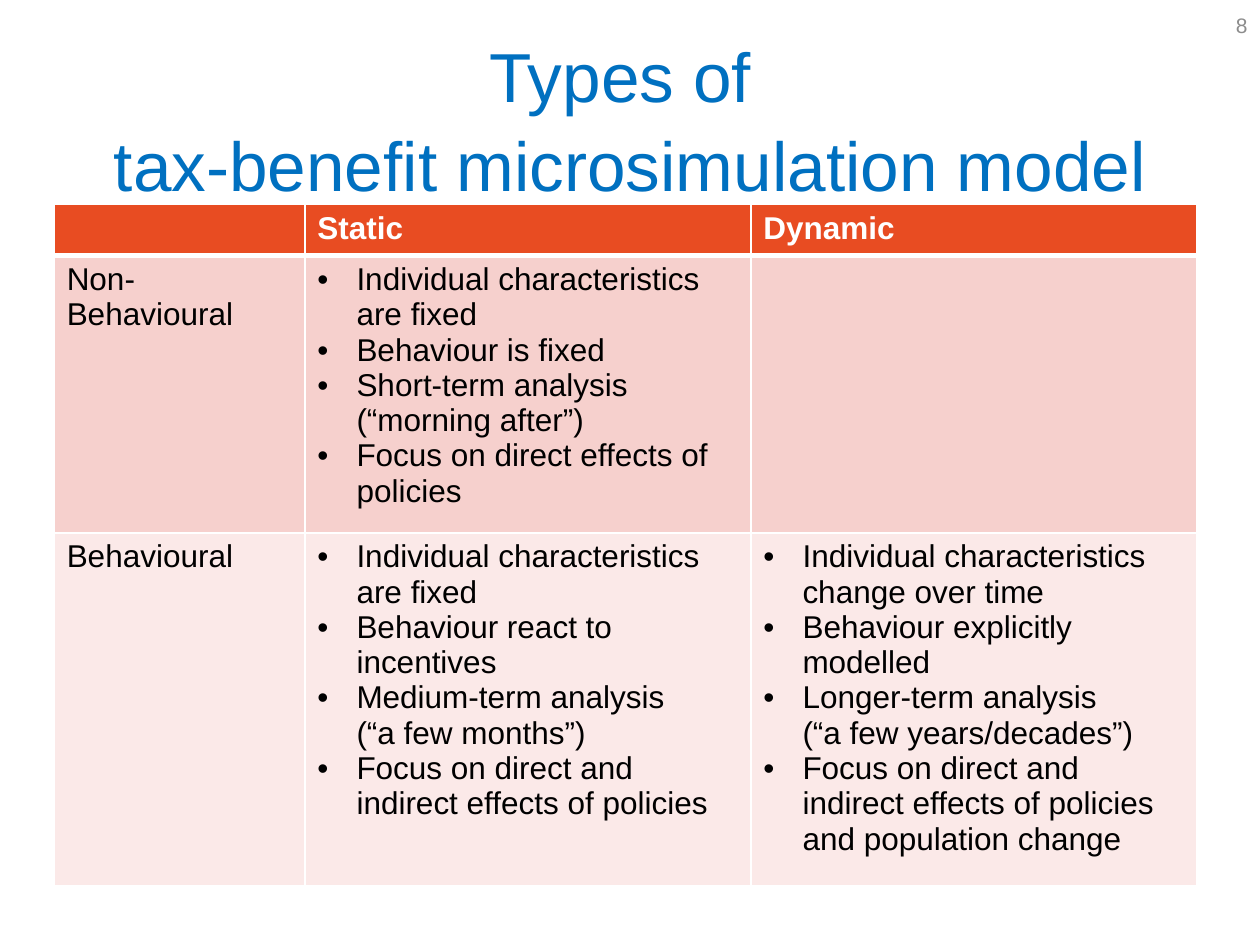
from pptx import Presentation
from pptx.dml.color import RGBColor
from pptx.enum.text import MSO_ANCHOR, MSO_AUTO_SIZE, PP_ALIGN
from pptx.oxml import parse_xml
from pptx.oxml.ns import nsdecls
from pptx.util import Inches, Pt

BLUE = RGBColor(0x00, 0x70, 0xC0)
GREY = RGBColor(0x8C, 0x8C, 0x8C)
ORANGE = RGBColor(0xE8, 0x4C, 0x22)
ROSE = RGBColor(0xF6, 0xD0, 0xCD)
PALE = RGBColor(0xFB, 0xE9, 0xE8)
WHITE = RGBColor(0xFF, 0xFF, 0xFF)
BLACK = RGBColor(0x00, 0x00, 0x00)

WIDTHS = (1.99, 3.54, 3.54)
HEIGHTS = (0.41, 2.06, 2.64)
FILLS = (ORANGE, ROSE, PALE)
MODELS = (
    ((), ("Static",), ("Dynamic",)),
    (
        ("Non-Behavioural",),
        (
            "Individual characteristics are fixed",
            "Behaviour is fixed",
            "Short-term analysis (“morning after”)",
            "Focus on direct effects of policies",
        ),
        (),
    ),
    (
        ("Behavioural",),
        (
            "Individual characteristics are fixed",
            "Behaviour react to incentives",
            "Medium-term analysis \v(“a few months”)",
            "Focus on direct and indirect effects of policies",
        ),
        (
            "Individual characteristics change over time",
            "Behaviour explicitly modelled",
            "Longer-term analysis \v(“a few years/decades”)",
            "Focus on direct and indirect effects of policies and population change",
        ),
    ),
)


def set_font(para, size, color, bold=False):
    font = para.font
    font.name = "Arial"
    font.size = Pt(size)
    font.bold = bold
    font.color.rgb = color


def add_title(slide, left, top, width, height):
    title = slide.shapes.title
    title.left, title.top = Inches(left), Inches(top)
    title.width, title.height = Inches(width), Inches(height)
    frame = title.text_frame
    frame.auto_size = MSO_AUTO_SIZE.NONE
    frame.vertical_anchor = MSO_ANCHOR.MIDDLE
    para = frame.paragraphs[0]
    para.text = "Types of \vtax-benefit microsimulation model"
    para.alignment = PP_ALIGN.CENTER
    para.line_spacing = 1.07
    set_font(para, 39.6, BLUE)


def add_number(slide, left, top, width, height):
    box = slide.shapes.add_textbox(
        Inches(left), Inches(top), Inches(width), Inches(height)
    )
    frame = box.text_frame
    frame.word_wrap = True
    frame.vertical_anchor = MSO_ANCHOR.MIDDLE
    para = frame.paragraphs[0]
    para.text = "8"
    para.alignment = PP_ALIGN.RIGHT
    set_font(para, 12, GREY)


def add_bullet(para):
    props = para._p.get_or_add_pPr()
    props.set("marL", str(Inches(0.31)))
    props.set("indent", str(Inches(-0.31)))
    props.append(parse_xml(f'<a:buFont {nsdecls("a")} typeface="Arial"/>'))
    props.append(parse_xml(f'<a:buChar {nsdecls("a")} char="•"/>'))


def add_borders(cell, base):
    props = cell._tc.get_or_add_tcPr()
    for side, width in (("L", 1), ("R", 1), ("T", 1), ("B", base)):
        props.append(parse_xml(
            f'<a:ln{side} {nsdecls("a")} w="{Pt(width)}"><a:solidFill>'
            f'<a:srgbClr val="{WHITE}"/></a:solidFill></a:ln{side}>'
        ))


def fill_cell(cell, lines, fill, head):
    add_borders(cell, 3 if head else 1)
    cell.fill.solid()
    cell.fill.fore_color.rgb = fill
    frame = cell.text_frame
    for i, line in enumerate(lines):
        para = frame.paragraphs[0] if i == 0 else frame.add_paragraph()
        para.text = line
        if len(lines) > 1:
            add_bullet(para)
        set_font(para, 18, WHITE if head else BLACK, head)


def add_models(slide, left, top, width, height):
    table = slide.shapes.add_table(
        len(HEIGHTS), len(WIDTHS),
        Inches(left), Inches(top), Inches(width), Inches(height),
    ).table
    for col, size in zip(table.columns, WIDTHS):
        col.width = Inches(size)
    for r, (cells, fill) in enumerate(zip(MODELS, FILLS)):
        table.rows[r].height = Inches(HEIGHTS[r])
        for c, lines in enumerate(cells):
            fill_cell(table.cell(r, c), lines, fill, r == 0)


def main():
    deck = Presentation()
    deck.slide_width, deck.slide_height = Inches(10), Inches(7.5)
    slide = deck.slides.add_slide(deck.slide_layouts[5])
    add_title(slide, 0.5, 0.3, 9, 1.25)
    add_number(slide, 7.67, 0, 2.33, 0.4)
    add_models(slide, 0.43, 1.62, sum(WIDTHS), sum(HEIGHTS))
    deck.save("out.pptx")


if __name__ == "__main__":
    main()
